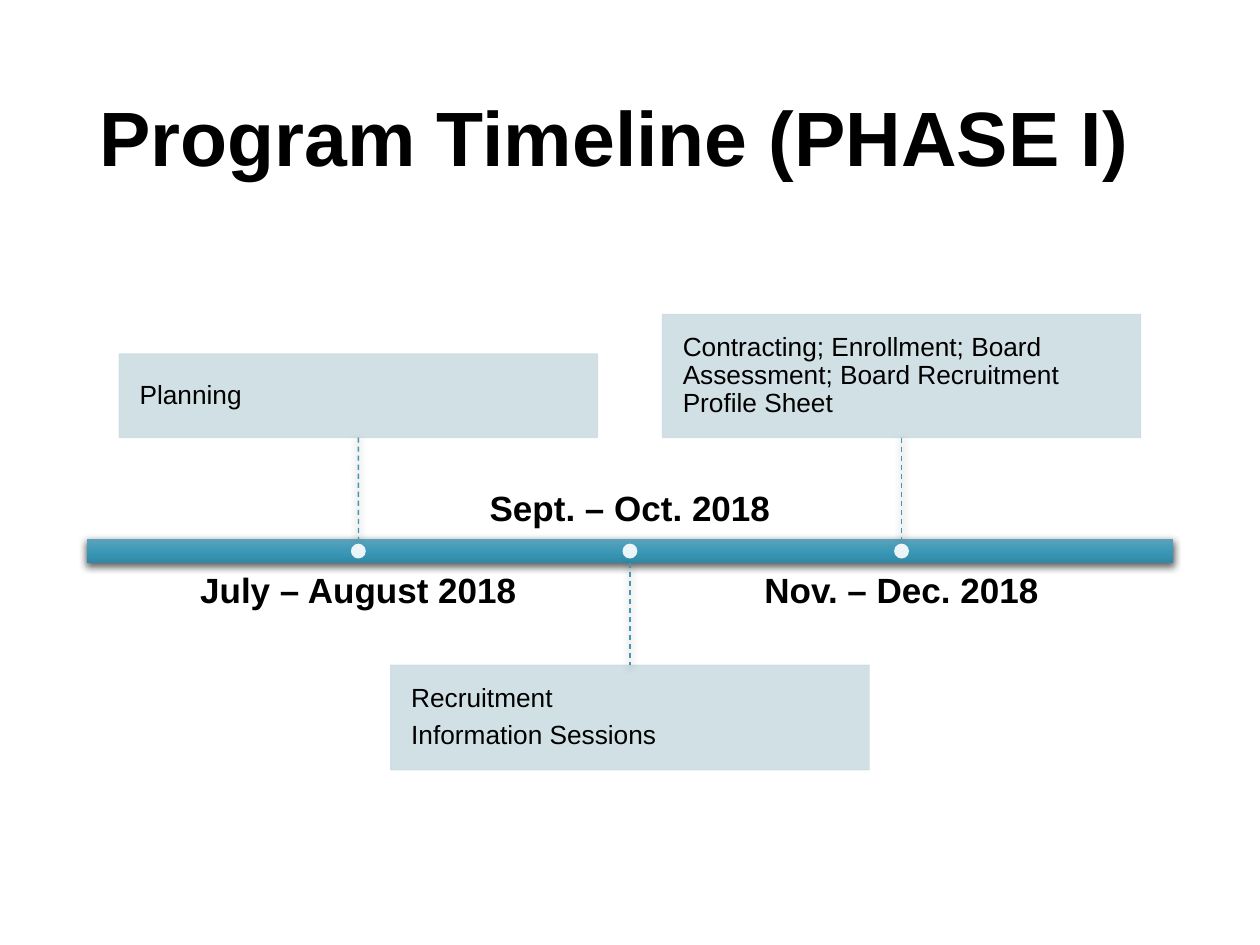
"""Build the Phase I program timeline slide."""
from copy import deepcopy

from lxml.etree import SubElement
from pptx import Presentation
from pptx.dml.color import RGBColor
from pptx.enum.dml import MSO_LINE
from pptx.enum.shapes import MSO_CONNECTOR, MSO_SHAPE
from pptx.enum.text import MSO_ANCHOR, MSO_AUTO_SIZE, PP_ALIGN
from pptx.oxml import parse_xml
from pptx.oxml.ns import nsdecls, qn
from pptx.util import Cm, Pt

rgb = RGBColor.from_string


def write(frame, lines, size, bold, align, anchor, inset_x, inset_y):
    frame.word_wrap = True
    frame.auto_size = MSO_AUTO_SIZE.NONE
    frame.vertical_anchor = anchor
    frame.margin_left = frame.margin_right = Cm(inset_x)
    frame.margin_top = frame.margin_bottom = Cm(inset_y)
    for i, line in enumerate(lines):
        paragraph = frame.add_paragraph() if i else frame.paragraphs[0]
        paragraph.alignment = align
        paragraph.line_spacing = 0.9
        paragraph.space_before = Pt(5.2 if i else 0)
        run = paragraph.add_run()
        run.text = line
        run.font.name = "Arial"
        run.font.size = Pt(size)
        run.font.bold = bold
        run.font.color.rgb = rgb("000000")


def cast_shadow(shape):
    shape._element.spPr.append(parse_xml(
        f'<a:effectLst {nsdecls("a")}>'
        '<a:outerShdw blurRad="57150" dist="19050" dir="5400000" algn="ctr" rotWithShape="0">'
        '<a:srgbClr val="000000"><a:alpha val="63000"/></a:srgbClr>'
        '</a:outerShdw></a:effectLst>'))


prs = Presentation()
prs.slide_width, prs.slide_height = Cm(25.4), Cm(19.05)
slide = prs.slides.add_slide(prs.slide_layouts[5])
shapes = slide.shapes

title = shapes.title
title.left, title.top, title.width, title.height = Cm(1.75), Cm(1.01), Cm(21.9), Cm(3.68)
write(title.text_frame, ["Program Timeline (PHASE I)"], 44, True,
      PP_ALIGN.LEFT, MSO_ANCHOR.MIDDLE, 0.25, 0.13)

bar_left, bar_top, bar_width, bar_height = 1.75, 10.87, 21.9, 0.48
bar_bottom = bar_top + bar_height
bar = shapes.add_shape(MSO_SHAPE.RECTANGLE, Cm(bar_left), Cm(bar_top), Cm(bar_width), Cm(bar_height))
bar.line.fill.background()
bar.fill.gradient()
bar.fill.gradient_angle = 270
stop_list = bar._element.spPr.find(".//" + qn("a:gsLst"))
stop_list.append(deepcopy(stop_list[-1]))
for stop, position, colour in zip(bar.fill.gradient_stops, (0, 0.5, 1), ("5CA2BB", "3B99B7", "2F89A7")):
    stop.position = position
    stop.color.rgb = rgb(colour)
cast_shadow(bar)

phases = [
    ("July – August 2018", ["Planning"], 7.14, 1.68),
    ("Sept. – Oct. 2018", ["Recruitment", "Information Sessions"], 13.41, 2.11),
    ("Nov. – Dec. 2018",
     ["Contracting; Enrollment; Board Assessment; Board Recruitment Profile Sheet"], 6.34, 2.48),
]
card_width, date_width, date_height, date_gap, dot_size = 9.64, 8.76, 1.37, 0.2, 0.3

for i, (date, activities, card_top, card_height) in enumerate(phases):
    centre = bar_left + bar_width * (i + 1) / 4
    card_above = card_top < bar_top

    card = shapes.add_shape(MSO_SHAPE.RECTANGLE, Cm(centre - card_width / 2), Cm(card_top),
                            Cm(card_width), Cm(card_height))
    card.fill.solid()
    card.fill.fore_color.rgb = rgb("CDDDE3")
    card.line.color.rgb = rgb("CDDDE3")
    card.line.width = Pt(0.75)
    write(card.text_frame, activities, 15, False, PP_ALIGN.LEFT, MSO_ANCHOR.MIDDLE, 0.41, 0.41)

    stem = shapes.add_connector(MSO_CONNECTOR.STRAIGHT, Cm(centre), Cm(card_top + card_height),
                                Cm(centre), Cm(bar_top))
    if card_above:
        stem.begin_connect(card, 2)
    else:
        stem.begin_connect(bar, 2)
        stem.end_connect(card, 0)
    stem.line.color.rgb = rgb("4297B2")
    stem.line.width = Pt(0.75)
    stem.line.dash_style = MSO_LINE.DASH
    cast_shadow(stem)

    dot = shapes.add_shape(MSO_SHAPE.OVAL, Cm(centre - dot_size / 2),
                           Cm((bar_top + bar_bottom - dot_size) / 2), Cm(dot_size), Cm(dot_size))
    dot.fill.solid()
    dot.fill.fore_color.rgb = rgb("FFFFFF")
    dot.line.fill.background()

    for shape in (card, dot):
        shape.shadow.inherit = False
        for colour in shape._element.spPr.iter(qn("a:srgbClr")):
            SubElement(colour, qn("a:alpha"), val="90000")

    date_top = bar_bottom + date_gap if card_above else bar_top - date_gap - date_height
    date_box = shapes.add_textbox(Cm(centre - date_width / 2), Cm(date_top), Cm(date_width), Cm(date_height))
    write(date_box.text_frame, [date], 20, True, PP_ALIGN.CENTER,
          MSO_ANCHOR.TOP if card_above else MSO_ANCHOR.BOTTOM, 0, 0)

prs.save("out.pptx")
